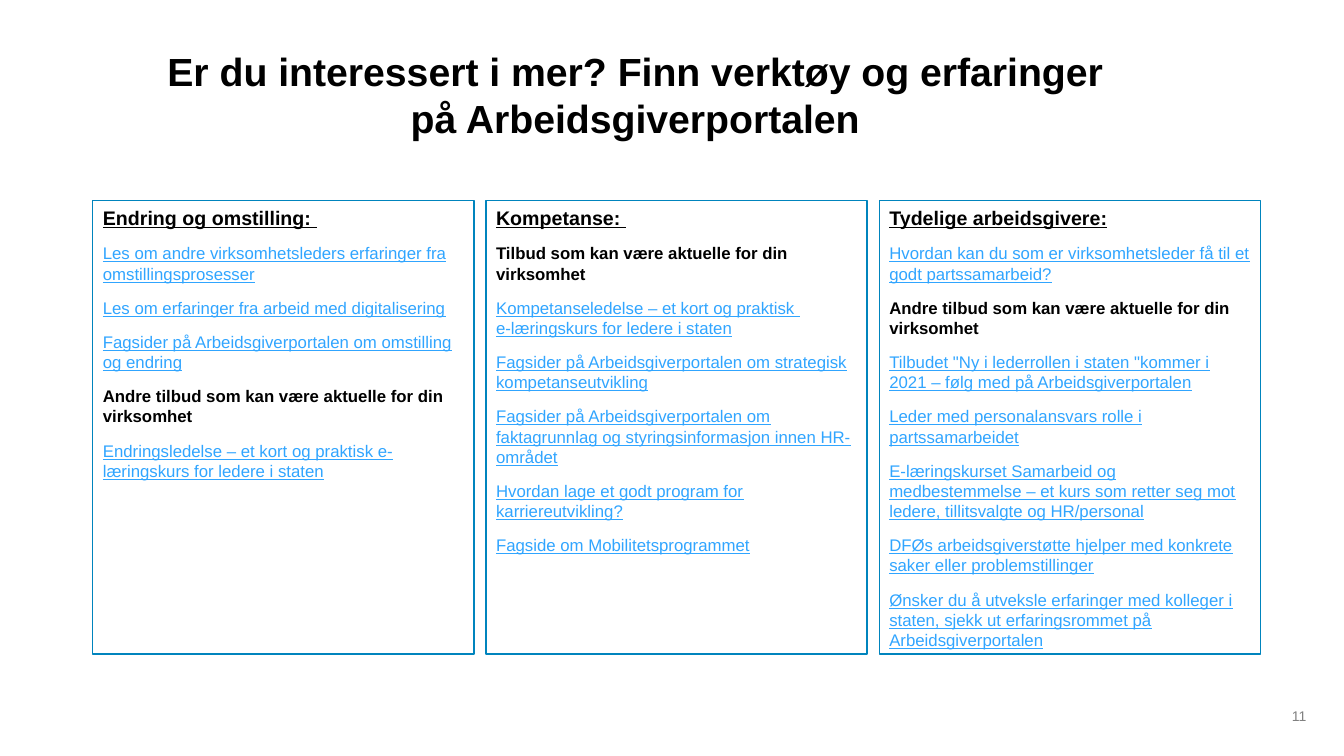
import copy
import dataclasses

import pptx
import pptx.dml.color
import pptx.enum.text
import pptx.oxml
import pptx.oxml.ns
import pptx.util

Inches = pptx.util.Inches
RGB = pptx.dml.color.RGBColor
Align = pptx.enum.text.PP_ALIGN
Anchor = pptx.enum.text.MSO_ANCHOR


@dataclasses.dataclass(frozen=True)
class Theme:
    font: str = "Arial"
    ink: str = "000000"
    link: str = "30A5FF"
    border: str = "0084BD"
    paper: str = "FFFFFF"
    muted: str = "808080"
    title_size: int = 28
    heading_size: int = 14
    body_size: int = 12
    number_size: int = 10
    line_spacing: float = 1.0
    paragraph_gap: int = 10


@dataclasses.dataclass(frozen=True)
class Entry:
    text: str
    is_link: bool = True


@dataclasses.dataclass(frozen=True)
class Column:
    placeholder: int
    heading: str
    entries: tuple[Entry, ...]


THEME = Theme()

# Column content
COLUMNS = (
    Column(1, "Endring og omstilling: ", (
        Entry("Les om andre virksomhetsleders erfaringer fra omstillingsprosesser"),
        Entry("Les om erfaringer fra arbeid med digitalisering"),
        Entry("Fagsider på Arbeidsgiverportalen om omstilling og endring"),
        Entry("Andre tilbud som kan være aktuelle for din virksomhet", is_link=False),
        Entry("Endringsledelse – et kort og praktisk e-læringskurs for ledere i staten"),
    )),
    Column(2, "Kompetanse: ", (
        Entry("Tilbud som kan være aktuelle for din virksomhet", is_link=False),
        Entry("Kompetanseledelse – et kort og praktisk \ve-læringskurs for ledere i staten"),
        Entry("Fagsider på Arbeidsgiverportalen om strategisk kompetanseutvikling"),
        Entry("Fagsider på Arbeidsgiverportalen om faktagrunnlag og "
              "styringsinformasjon innen HR-området"),
        Entry("Hvordan lage et godt program for karriereutvikling?"),
        Entry("Fagside om Mobilitetsprogrammet"),
    )),
    Column(3, "Tydelige arbeidsgivere:", (
        Entry("Hvordan kan du som er virksomhetsleder få til et godt partssamarbeid?"),
        Entry("Andre tilbud som kan være aktuelle for din virksomhet", is_link=False),
        Entry('Tilbudet "Ny i lederrollen i staten "kommer i 2021 – følg med på '
              "Arbeidsgiverportalen"),
        Entry("Leder med personalansvars rolle i partssamarbeidet"),
        Entry("E-læringskurset Samarbeid og medbestemmelse – et kurs som retter seg mot "
              "ledere, tillitsvalgte og HR/personal"),
        Entry("DFØs arbeidsgiverstøtte hjelper med konkrete saker eller problemstillinger"),
        Entry("Ønsker du å utveksle erfaringer med kolleger i staten, sjekk ut "
              "erfaringsrommet på Arbeidsgiverportalen"),
    )),
)
LEFT, TOP, WIDTH, HEIGHT, PITCH = 0.92, 1.99, 3.78, 4.5, 3.9


def place(box, left: float, top: float, width: float, height: float, anchor) -> None:
    box.left, box.top = Inches(left), Inches(top)
    box.width, box.height = Inches(width), Inches(height)
    frame = box.text_frame
    frame.word_wrap = True
    frame.auto_size = pptx.enum.text.MSO_AUTO_SIZE.NONE
    frame.vertical_anchor = anchor


def write(para, text: str, *, size: int, color: str = THEME.ink, bold: bool = False,
          underline: bool = False, align=Align.LEFT, before: int = 0) -> None:
    para.text = text
    para.alignment = align
    para.line_spacing = THEME.line_spacing
    para.space_before = pptx.util.Pt(before)
    para.space_after = pptx.util.Pt(0)
    for span in para.runs:
        span.font.name = THEME.font
        span.font.size = pptx.util.Pt(size)
        span.font.bold = bold
        span.font.underline = underline
        span.font.color.rgb = RGB.from_string(color)
    # Line breaks take the format of the text around them
    for line_break in para._p.findall(pptx.oxml.ns.qn("a:br")):
        line_break.append(copy.deepcopy(para.runs[0].font._rPr))


def remove_bullet(para) -> None:
    properties = para._p.get_or_add_pPr()
    properties.set("marL", "0")
    properties.set("indent", "0")
    properties.append(pptx.oxml.parse_xml(f"<a:buNone {pptx.oxml.ns.nsdecls('a')}/>"))


def fill_column(box, column: Column, left: float) -> None:
    place(box, left, TOP, WIDTH, HEIGHT, Anchor.TOP)
    box.fill.solid()
    box.fill.fore_color.rgb = RGB.from_string(THEME.paper)
    box.line.color.rgb = RGB.from_string(THEME.border)
    box.line.width = pptx.util.Pt(1)

    heading = box.text_frame.paragraphs[0]
    remove_bullet(heading)
    write(heading, column.heading, size=THEME.heading_size, bold=True, underline=True)
    for entry in column.entries:
        para = box.text_frame.add_paragraph()
        remove_bullet(para)
        write(para, entry.text, size=THEME.body_size,
              color=THEME.link if entry.is_link else THEME.ink,
              bold=not entry.is_link, underline=entry.is_link,
              before=THEME.paragraph_gap)


def main() -> None:
    deck = pptx.Presentation()
    deck.slide_width, deck.slide_height = Inches(13.33), Inches(7.5)
    page = deck.slides.add_slide(deck.slide_layouts.get_by_name("Comparison"))

    # Title
    title = page.shapes.title
    place(title, 1.38, 0.22, 9.84, 1.44, Anchor.MIDDLE)
    write(title.text_frame.paragraphs[0],
          "Er du interessert i mer? Finn verktøy og erfaringer på Arbeidsgiverportalen",
          size=THEME.title_size, bold=True, align=Align.CENTER)

    # Three columns; the layout's fourth body is not needed
    bodies = {box.placeholder_format.idx: box for box in page.placeholders}
    for position, column in enumerate(COLUMNS):
        fill_column(bodies[column.placeholder], column, LEFT + position * PITCH)
    spare = bodies[4].element
    spare.getparent().remove(spare)

    # Page number
    number = page.shapes.add_textbox(0, 0, 0, 0)
    place(number, 12.64, 6.91, 0.49, 0.39, Anchor.MIDDLE)
    write(number.text_frame.paragraphs[0], "11", size=THEME.number_size,
          color=THEME.muted, align=Align.CENTER)

    deck.save("out.pptx")


if __name__ == "__main__":
    main()
